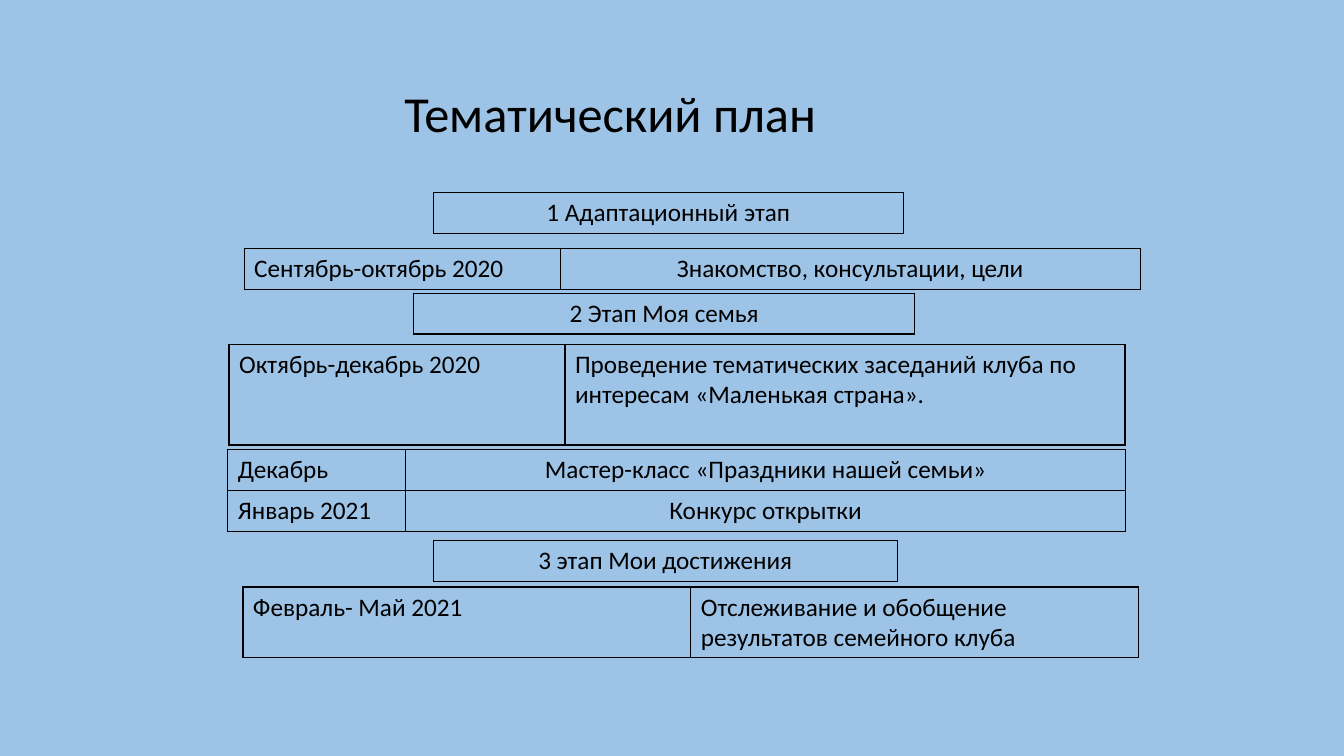
"""Build the thematic plan slide of a family club."""
import lxml.etree
import pptx
import pptx.dml.color
import pptx.enum.text
import pptx.oxml.ns
import pptx.util

Pt = pptx.util.Pt
ALIGN = pptx.enum.text.PP_ALIGN
BLUE = pptx.dml.color.RGBColor(0x9D, 0xC3, 0xE6)
BLACK = pptx.dml.color.RGBColor(0, 0, 0)
ROW_HEIGHT = 29.2

STAGES = [
    (309.6, 137.7, [335.5], ROW_HEIGHT, [["1 Адаптационный этап"]], [ALIGN.CENTER]),
    (174.4, 177.3, [226, 414], ROW_HEIGHT,
     [["Сентябрь-октябрь 2020", "Знакомство, консультации, цели"]],
     [ALIGN.LEFT, ALIGN.CENTER]),
    (295.4, 209.4, [358], ROW_HEIGHT, [["2 Этап Моя семья"]], [ALIGN.CENTER]),
    (163.6, 245.8, [240, 400], 72,
     [["Октябрь-декабрь 2020",
       "Проведение тематических заседаний клуба по интересам «Маленькая страна»."]],
     [ALIGN.LEFT, ALIGN.LEFT]),
    (162.7, 321, [127.2, 514], ROW_HEIGHT,
     [["Декабрь", "Мастер-класс «Праздники нашей семьи»"],
      ["Январь 2021", "Конкурс открытки"]],
     [ALIGN.LEFT, ALIGN.CENTER]),
    (309.6, 386, [331.2], ROW_HEIGHT, [["3 этап Мои достижения"]], [ALIGN.CENTER]),
    (173.5, 419.3, [320, 320], 50.4,
     [["Февраль- Май 2021", "Отслеживание и обобщение результатов семейного клуба"]],
     [ALIGN.LEFT, ALIGN.LEFT]),
]


def write_text(text_frame, text, size=18, align=ALIGN.LEFT, font="Calibri", color=BLACK):
    text_frame.text = text
    paragraph = text_frame.paragraphs[0]
    paragraph.alignment = align
    run_font = paragraph.runs[0].font
    run_font.name = font
    run_font.size = Pt(size)
    run_font.color.rgb = color


class PlanSlide:
    def __init__(self, presentation, background=BLUE, line=BLACK, line_width=1):
        self.line = line
        self.line_width = line_width
        self.slide = presentation.slides.add_slide(presentation.slide_layouts[5])
        fill = self.slide.background.fill
        fill.solid()
        fill.fore_color.rgb = background

    def add_title(self, text, left, top, width, height):
        title = self.slide.shapes.title
        title.left, title.top = Pt(left), Pt(top)
        title.width, title.height = Pt(width), Pt(height)
        title.text_frame.word_wrap = False
        title.text_frame.auto_size = pptx.enum.text.MSO_AUTO_SIZE.SHAPE_TO_FIT_TEXT
        write_text(title.text_frame, text, size=36, align=ALIGN.CENTER)

    def add_table(self, left, top, widths, row_height, rows, alignments):
        table = self.slide.shapes.add_table(
            len(rows), len(widths), Pt(left), Pt(top),
            Pt(sum(widths)), Pt(row_height * len(rows))).table
        table.first_row = False
        table.horz_banding = False
        for column, width in zip(table.columns, widths):
            column.width = Pt(width)
        for row, texts in zip(table.rows, rows):
            row.height = Pt(row_height)
            for cell, text, align in zip(row.cells, texts, alignments):
                write_text(cell.text_frame, text, align=align)
                self.add_borders(cell)
                cell.fill.background()

    def add_borders(self, cell):
        qn = pptx.oxml.ns.qn
        properties = cell._tc.get_or_add_tcPr()
        for side in ("a:lnL", "a:lnR", "a:lnT", "a:lnB"):
            border = lxml.etree.SubElement(properties, qn(side), w=str(Pt(self.line_width)))
            fill = lxml.etree.SubElement(border, qn("a:solidFill"))
            lxml.etree.SubElement(fill, qn("a:srgbClr"), val=str(self.line))


def main():
    presentation = pptx.Presentation()
    presentation.slide_width = Pt(960)
    presentation.slide_height = Pt(540)
    plan = PlanSlide(presentation)
    plan.add_title("Тематический план", 280, 55, 312, 51)
    for stage in STAGES:
        plan.add_table(*stage)
    presentation.save("out.pptx")


if __name__ == "__main__":
    main()
